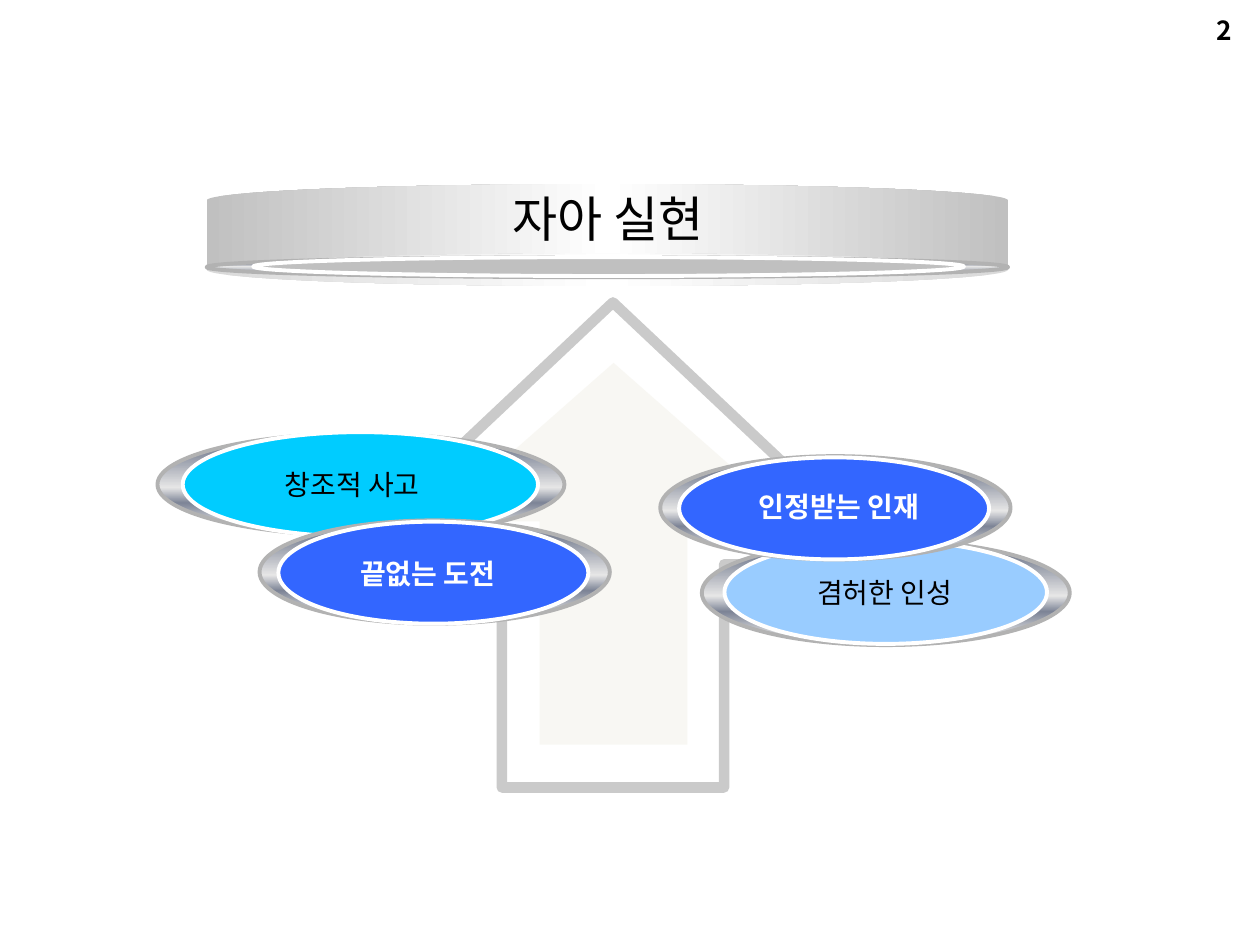
from lxml import etree
from pptx import Presentation
from pptx import util as u
from pptx.dml import color
from pptx.enum import shapes, text
from pptx.oxml import ns

FONT = "Noto Sans CJK KR"
METAL = [(0, "E6E6E6"), (15, "7D8496"), (53, "E6E6E6"),
         (68, "7D8496"), (93, "E6E6E6"), (100, "FFFFFF")]
SILVER = [(0, "C0C0C0"), (50, "FFFFFF"), (100, "C0C0C0")]
RIM = ("B2B2B2", 2.25)
EDGE = ("FFFFFF", 2.25)
S = shapes.MSO_SHAPE
AL = text.PP_ALIGN


def rgb(value):
    return color.RGBColor.from_string(value)


def set_alpha(fill, percent):
    clr = fill._xPr.find(".//" + ns.qn("a:srgbClr"))
    etree.SubElement(clr, ns.qn("a:alpha"), val=str(percent * 1000))


class Deck:
    def __init__(self, prs):
        self.s = prs.slides.add_slide(prs.slide_layouts[5])

    def gradient(self, sp, stops, angle):
        sp.fill.gradient()
        grad = sp.fill._xPr.find(ns.qn("a:gradFill"))
        for child in list(grad):
            grad.remove(child)
        lst = etree.SubElement(grad, ns.qn("a:gsLst"))
        for pos, value in stops:
            gs = etree.SubElement(lst, ns.qn("a:gs"), pos=str(pos * 1000))
            etree.SubElement(gs, ns.qn("a:srgbClr"), val=value)
        etree.SubElement(grad, ns.qn("a:lin"), ang=str(angle * 60000), scaled="1")

    def shape(self, kind, box, fill=None, line=None, adj=(), rotation=0,
              angle=90, fill_alpha=None, line_alpha=None):
        sp = self.s.shapes.add_shape(kind, *map(u.Inches, box))
        sp.shadow.inherit = False
        sp.rotation = rotation
        for i, value in enumerate(adj):
            sp.adjustments[i] = value
        if isinstance(fill, list):
            self.gradient(sp, fill, angle)
        elif fill:
            sp.fill.solid()
            sp.fill.fore_color.rgb = rgb(fill)
        else:
            sp.fill.background()
        if fill_alpha:
            set_alpha(sp.fill, fill_alpha)
        if line:
            sp.line.color.rgb = rgb(line[0])
            sp.line.width = u.Pt(line[1])
            if line_alpha:
                set_alpha(sp.line.fill, line_alpha)
        else:
            sp.line.fill.background()
        return sp

    def disc(self, ring, face, fill, rotation=0):
        """A metal ring with a coloured face on it."""
        self.shape(S.OVAL, ring, METAL, RIM, rotation=rotation)
        self.shape(S.OVAL, face, fill, EDGE, rotation=rotation)

    def put_text(self, sp, words, size, value="000000", bold=False,
                 align=AL.CENTER, font=FONT, **frame):
        tf = sp.text_frame
        for name, setting in {"word_wrap": True, **frame}.items():
            setattr(tf, name, setting)
        p = tf.paragraphs[0]
        p.alignment = align
        r = p.add_run()
        r.text = words
        for name, setting in {"size": u.Pt(size), "bold": bold, "name": font}.items():
            setattr(r.font, name, setting)
        r.font.color.rgb = rgb(value)
        etree.SubElement(r.font._element, ns.qn("a:ea"), typeface=FONT)

    def label(self, box, words, size=16, **style):
        sp = self.s.shapes.add_textbox(*map(u.Inches, box))
        self.put_text(sp, words, size, **style)

    def title(self, box, words):
        sp = self.s.shapes.title
        sp.left, sp.top, sp.width, sp.height = map(u.Inches, box)
        self.put_text(sp, words, 28, font="Arial",
                      vertical_anchor=text.MSO_ANCHOR.MIDDLE,
                      auto_size=text.MSO_AUTO_SIZE.NONE,
                      margin_left=0, margin_right=0, margin_top=0, margin_bottom=0)
        # Bring the title in front of the drum
        self.s.shapes._spTree.append(sp._element)


def main():
    prs = Presentation()
    prs.slide_width, prs.slide_height = u.Inches(10), u.Inches(7.5)
    deck = Deck(prs)

    # Page number
    deck.label((7.55, 0.11, 2.33, 0.25), "2", 15, bold=True, align=AL.RIGHT,
               vertical_anchor=text.MSO_ANCHOR.MIDDLE)

    # Rising arrows
    deck.shape(S.UP_ARROW, (2.66, 2.4, 4.41, 3.85), line=("969696", 6),
               adj=(0.4, 0.54), line_alpha=50)
    deck.shape(S.UP_ARROW, (3.44, 2.88, 2.86, 3.03), "EEECE1",
               adj=(0.41, 0.44), fill_alpha=39)

    # Qualities: ring, face, fill, label box, words, text style
    strong = {"value": "FFFFFF", "bold": True}
    plain = {"word_wrap": False}
    qualities = [
        ((5.57, 4.29, 2.92, 0.83), (5.75, 4.29, 2.56, 0.82), "99CCFF",
         (6.32, 4.52, 1.4, 0.37), "겸허한 인성", plain),
        ((1.25, 3.44, 3.23, 0.81), (1.45, 3.43, 2.82, 0.83), "00CCFF",
         (2.1, 3.66, 1.39, 0.37), "창조적 사고", plain),
        ((2.06, 4.13, 2.78, 0.82), (2.21, 4.14, 2.46, 0.81), "3366FF",
         (2.53, 4.37, 1.73, 0.37), "끝없는 도전", strong),
        ((5.24, 3.62, 2.78, 0.82), (5.39, 3.63, 2.46, 0.81), "3366FF",
         (5.4, 3.84, 2.52, 0.37), "인정받는 인재", strong),
    ]
    for ring, face, fill, box, words, style in qualities:
        deck.disc(ring, face, fill)
        deck.label(box, words, **style)

    # Goal drum
    deck.shape(S.CAN, (1.64, 1.46, 6.36, 0.81), SILVER, adj=(0.32,),
               rotation=180, angle=0)
    deck.disc((1.64, 2.04, 6.36, 0.16), (2.01, 2.04, 5.64, 0.15), "C0C0C0", 180)
    deck.title((1.63, 1.41, 6.39, 0.64), "자아 실현")

    prs.save("out.pptx")


if __name__ == "__main__":
    main()
